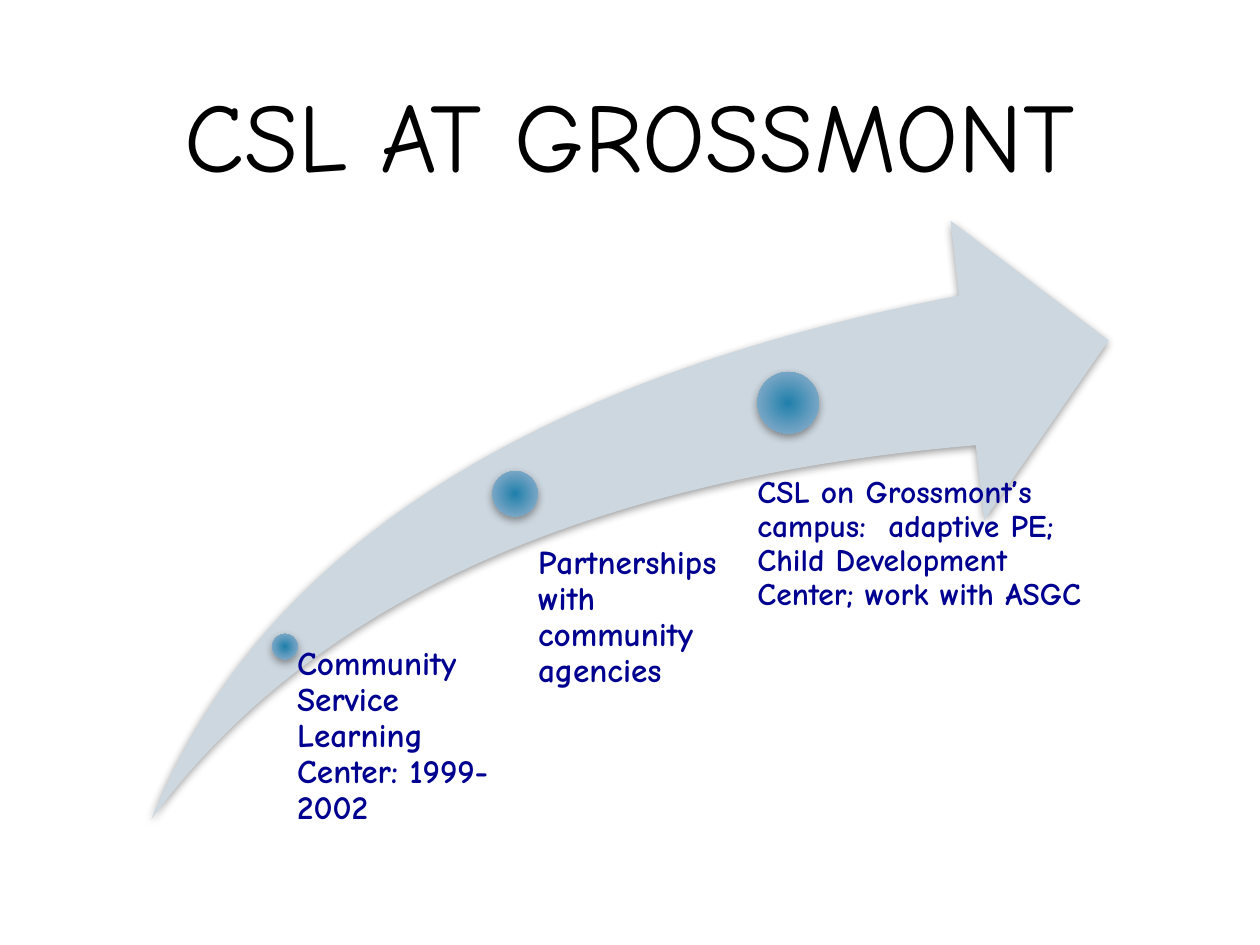
from dataclasses import dataclass

from lxml import etree
from pptx import Presentation
from pptx.dml.color import RGBColor
from pptx.enum.shapes import MSO_SHAPE
from pptx.enum.text import MSO_ANCHOR, MSO_AUTO_SIZE, PP_ALIGN
from pptx.oxml import parse_xml
from pptx.oxml.ns import nsdecls, qn
from pptx.util import Cm, Pt

SWOOSH, OVAL = MSO_SHAPE.SWOOSH_ARROW, MSO_SHAPE.OVAL
TOP, BOTTOM = MSO_ANCHOR.TOP, MSO_ANCHOR.BOTTOM
LEFT, CENTER = PP_ALIGN.LEFT, PP_ALIGN.CENTER
NO_AUTOFIT = MSO_AUTO_SIZE.NONE

FONT = "Comic Neue"
BLACK, NAVY, PALE_BLUE = "000000", "000090", "CDD7DF"
DOT_STOPS = [(0, "2080AB"), (69, "75A5C5"), (100, "B8CCDC")]


@dataclass
class Box:
    """A rectangle in centimetres."""
    left: float
    top: float
    width: float
    height: float

    def inner(self, left, top, width, height):
        """Return a box whose offset is counted from this one."""
        return Box(self.left + left, self.top + top, width, height)

    def lengths(self):
        return [Cm(value) for value in (self.left, self.top, self.width, self.height)]


@dataclass
class Milestone:
    text: str
    size: int
    dot: tuple  # left, top, diameter
    label: tuple  # left, top, width, height
    indent: float


MILESTONES = [
    Milestone("Community Service Learning Center: 1999-2002", 19,
              (2.44, 8.33, 0.51), (2.69, 8.59, 4.5, 3.48), 0.25),
    Milestone("Partnerships with community agencies", 19,
              (6.88, 5.05, 0.91), (7.32, 6.55, 4.67, 4.45), 0.48),
    Milestone("CSL on Grossmont’s campus:  adaptive PE; Child Development Center; "
              "work with ASGC", 18,
              (12.22, 3.05, 1.24), (11.56, 5.16, 7.19, 5.41), 0.66),
]


def color(hex_value):
    return RGBColor.from_string(hex_value)


def write(frame, text, size, hex_value, align, anchor, bold=False):
    frame.word_wrap = True
    frame.auto_size = NO_AUTOFIT
    frame.vertical_anchor = anchor
    para = frame.paragraphs[0]
    para.alignment = align
    span = para.add_run()
    span.text = text
    span.font.name = FONT
    span.font.size = Pt(size)
    span.font.bold = bold
    span.font.color.rgb = color(hex_value)
    return para


def add_shadowed_shape(shapes, kind, box):
    """Add a shape without outline and with a soft shadow below it."""
    shape = shapes.add_shape(kind, *box.lengths())
    shape.line.fill.background()
    shape.shadow.inherit = False
    effects = shape._element.spPr.find(qn("a:effectLst"))
    shadow = etree.SubElement(effects, qn("a:outerShdw"), blurRad=str(Pt(5)),
                              dist=str(Pt(2)), dir="5400000", rotWithShape="0")
    tint = etree.SubElement(shadow, qn("a:srgbClr"), val=BLACK)
    etree.SubElement(tint, qn("a:alpha"), val="40000")
    return shape


def fill_radial(shape, stops):
    shape.fill.background()
    properties = shape._element.spPr
    stop_xml = "".join(
        f'<a:gs pos="{position * 1000}"><a:srgbClr val="{hex_value}"/></a:gs>'
        for position, hex_value in stops)
    gradient = parse_xml(
        f'<a:gradFill {nsdecls("a")} rotWithShape="1"><a:gsLst>{stop_xml}</a:gsLst>'
        '<a:path path="circle"><a:fillToRect l="100000" t="100000" r="100000" b="100000"/>'
        '</a:path></a:gradFill>')
    properties.replace(properties.find(qn("a:noFill")), gradient)


def add_title(page, box, text):
    title = page.shapes.title
    title.left, title.top, title.width, title.height = box.lengths()
    write(title.text_frame, text, 56, BLACK, CENTER, BOTTOM)


def add_milestone(shapes, box, milestone):
    left, top, diameter = milestone.dot
    dot = add_shadowed_shape(shapes, OVAL, box.inner(left, top, diameter, diameter))
    fill_radial(dot, DOT_STOPS)

    label = shapes.add_textbox(*box.inner(*milestone.label).lengths())
    frame = label.text_frame
    frame.margin_left = Cm(milestone.indent)
    frame.margin_top = frame.margin_right = frame.margin_bottom = 0
    para = write(frame, milestone.text, milestone.size, NAVY, LEFT, TOP, bold=True)
    para.line_spacing = 0.9


def add_growth_arrow(page, box, milestones):
    shapes = page.shapes.add_group_shape().shapes
    arrow = add_shadowed_shape(shapes, SWOOSH, box)
    arrow.adjustments[0] = arrow.adjustments[1] = 0.25
    arrow.fill.solid()
    arrow.fill.fore_color.rgb = color(PALE_BLUE)
    for milestone in milestones:
        add_milestone(shapes, box, milestone)


def main():
    deck = Presentation()
    deck.slide_width, deck.slide_height = Cm(25.4), Cm(19.05)
    page = deck.slides.add_slide(deck.slide_layouts.get_by_name("Title Only"))
    add_title(page, Box(1.52, 0.3, 22.35, 3.71), "CSL AT GROSSMONT")
    add_growth_arrow(page, Box(3.05, 4.45, 19.3, 12.07), MILESTONES)
    deck.save("out.pptx")


if __name__ == "__main__":
    main()
